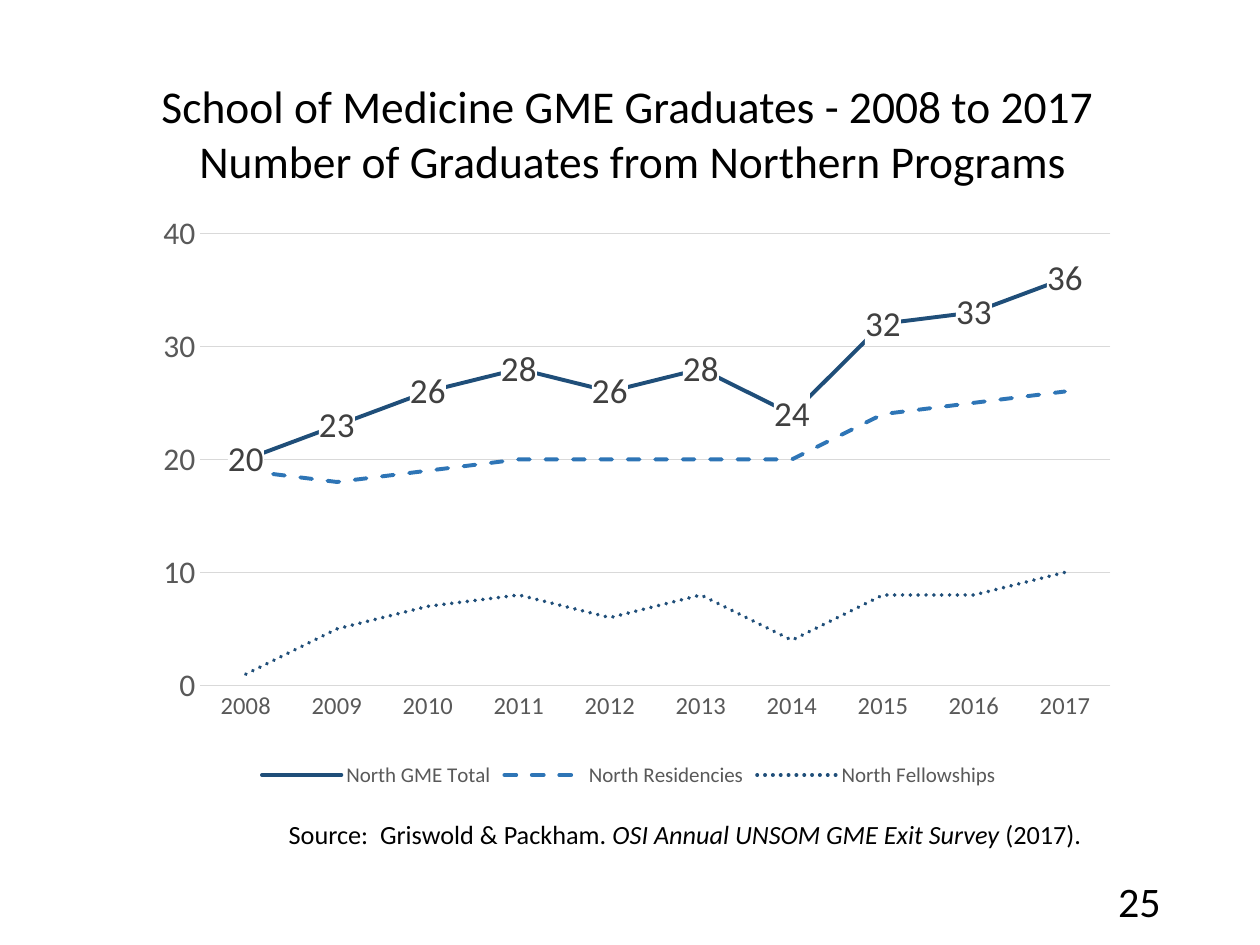
from dataclasses import dataclass

from lxml import etree
from pptx import Presentation
from pptx import util as u
from pptx.chart import data as chart_data
from pptx.dml import color
from pptx.enum import chart as charts, dml, text
from pptx.oxml import ns

Pt = u.Pt


@dataclass(frozen=True)
class Theme:
    font: str = "Calibri"
    ink: str = "000000"
    paper: str = "FFFFFF"
    axis: str = "595959"
    label: str = "404040"
    grid: str = "D9D9D9"
    dark_blue: str = "1F4E79"
    blue: str = "2E75B6"
    title_size: float = 26
    source_size: float = 15
    number_size: float = 24
    label_size: float = 20
    value_size: float = 18
    category_size: float = 14
    legend_size: float = 12
    chart_size: float = 10


THEME = Theme()
YEARS = [str(year) for year in range(2008, 2018)]
SERIES = [
    ("North GME Total", [20, 23, 26, 28, 26, 28, 24, 32, 33, 36],
     THEME.dark_blue, dml.MSO_LINE.SOLID),
    ("North Residencies", [19, 18, 19, 20, 20, 20, 20, 24, 25, 26],
     THEME.blue, dml.MSO_LINE.DASH),
    ("North Fellowships", [1, 5, 7, 8, 6, 8, 4, 8, 8, 10],
     THEME.dark_blue, dml.MSO_LINE.ROUND_DOT),
]


def style_font(font, size, shade):
    font.name = THEME.font
    font.size = Pt(size)
    font.bold = False
    font.color.rgb = color.RGBColor.from_string(shade)


def style_line(line, shade, width):
    line.color.rgb = color.RGBColor.from_string(shade)
    line.width = Pt(width)


def place(shape, box):
    shape.left, shape.top, shape.width, shape.height = map(Pt, box)


def format_frame(frame, size, align, anchor):
    frame.word_wrap = True
    frame.auto_size = text.MSO_AUTO_SIZE.NONE
    frame.vertical_anchor = anchor
    for para in frame.paragraphs:
        para.alignment = align
        para.space_before = Pt(0)
        for span in para.runs:
            style_font(span.font, size, THEME.ink)


def add_title(page, box):
    title = page.shapes.title
    place(title, box)
    title.text_frame.text = (
        "School of Medicine GME Graduates - 2008 to 2017 \n"
        "Number of Graduates from Northern Programs")
    format_frame(title.text_frame, THEME.title_size,
                 text.PP_ALIGN.CENTER, text.MSO_ANCHOR.TOP)


def add_source(page, box):
    frame = page.shapes.add_textbox(*map(Pt, box)).text_frame
    para = frame.paragraphs[0]
    for words, italic in [("Source:  Griswold & Packham. ", False),
                          ("OSI Annual UNSOM GME Exit Survey ", True),
                          ("(2017). ", False)]:
        span = para.add_run()
        span.text = words
        span.font.italic = italic
    format_frame(frame, THEME.source_size,
                 text.PP_ALIGN.CENTER, text.MSO_ANCHOR.TOP)


def add_page_number(page, box):
    frame = page.shapes.add_textbox(*map(Pt, box)).text_frame
    frame.text = "25"
    format_frame(frame, THEME.number_size,
                 text.PP_ALIGN.RIGHT, text.MSO_ANCHOR.MIDDLE)


def set_plot_area(chart, x, y, w, h):
    area = chart.element.find(".//" + ns.qn("c:plotArea"))
    for old in area.findall(ns.qn("c:layout")):
        area.remove(old)
    layout = etree.Element(ns.qn("c:layout"))
    area.insert(0, layout)
    manual = etree.SubElement(layout, ns.qn("c:manualLayout"))
    settings = {"layoutTarget": "inner", "xMode": "edge", "yMode": "edge",
                "x": x, "y": y, "w": w, "h": h}
    for name, value in settings.items():
        etree.SubElement(manual, ns.qn(f"c:{name}")).set("val", str(value))


def fill_label_background(chart, shade):
    labels = chart.element.find(f".//{ns.qn('c:ser')}/{ns.qn('c:dLbls')}")
    backing = etree.Element(ns.qn("c:spPr"))
    fill = etree.SubElement(backing, ns.qn("a:solidFill"))
    etree.SubElement(fill, ns.qn("a:srgbClr")).set("val", shade)
    labels.find(ns.qn("c:txPr")).addprevious(backing)


def round_line_caps(chart):
    route = "/".join(ns.qn(tag) for tag in ("c:ser", "c:spPr", "a:ln"))
    for line in chart.element.findall(".//" + route):
        line.set("cap", "rnd")


def format_axes(chart):
    category, value = chart.category_axis, chart.value_axis
    for axis, size in [(category, THEME.category_size),
                       (value, THEME.value_size)]:
        axis.major_tick_mark = charts.XL_TICK_MARK.NONE
        axis.minor_tick_mark = charts.XL_TICK_MARK.NONE
        style_font(axis.tick_labels.font, size, THEME.axis)
    style_line(category.format.line, THEME.grid, 0.75)
    value.minimum_scale = 0
    value.maximum_scale = 40
    value.major_unit = 10
    value.format.line.fill.background()
    value.has_major_gridlines = True
    style_line(value.major_gridlines.format.line, THEME.grid, 0.75)


def format_series(plot):
    plot.vary_by_categories = False
    for series, (_, _, shade, dash) in zip(plot.series, SERIES):
        series.smooth = False
        series.marker.style = charts.XL_MARKER_STYLE.NONE
        style_line(series.format.line, shade, 2.25)
        series.format.line.dash_style = dash
    labels = plot.series[0].data_labels
    labels.show_value = True
    labels.position = charts.XL_LABEL_POSITION.CENTER
    style_font(labels.font, THEME.label_size, THEME.label)


def add_graduates_chart(page, box):
    data = chart_data.CategoryChartData()
    data.categories = YEARS
    for name, values, _, _ in SERIES:
        data.add_series(name, values)
    chart = page.shapes.add_chart(
        charts.XL_CHART_TYPE.LINE, *map(Pt, box), data).chart
    chart.has_title = False
    style_font(chart.font, THEME.chart_size, THEME.ink)
    chart.has_legend = True
    chart.legend.position = charts.XL_LEGEND_POSITION.BOTTOM
    chart.legend.include_in_layout = False
    style_font(chart.legend.font, THEME.legend_size, THEME.axis)
    format_axes(chart)
    format_series(chart.plots[0])
    fill_label_background(chart, THEME.paper)
    round_line_caps(chart)
    set_plot_area(chart, 0.075, 0.033, 0.903, 0.782)


def main():
    deck = Presentation()
    deck.slide_width, deck.slide_height = Pt(720), Pt(540)
    page = deck.slides.add_slide(deck.slide_layouts.get_by_name("Title Only"))
    add_title(page, (20.9, 41, 681.8, 70.6))
    add_source(page, (153, 464, 480.2, 25.2))
    add_page_number(page, (508.3, 500.4, 162, 28.8))
    add_graduates_chart(page, (71.3, 122.4, 576, 330.5))
    deck.save("out.pptx")


if __name__ == "__main__":
    main()
